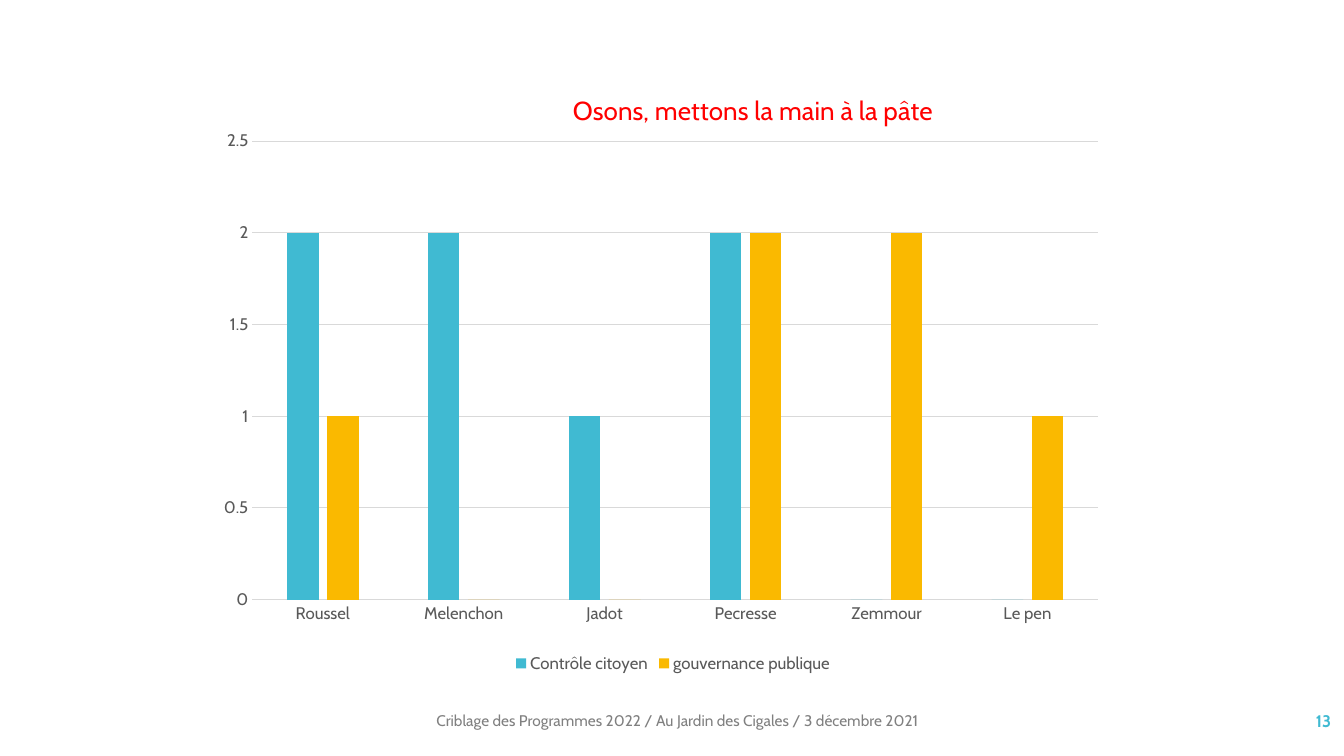
from lxml import etree
from pptx import Presentation
from pptx.chart.data import CategoryChartData
from pptx.dml.color import RGBColor
from pptx.enum import chart as ch, text
from pptx.oxml.ns import qn
from pptx.util import Inches, Pt

FONT = "Cabin"
COLORS = {"blue": "40BAD2", "yellow": "FAB900", "title": "FF0000",
          "label": "595959", "grid": "D9D9D9", "footer": "808080"}
TITLE = "Osons, mettons la main à la pâte"
CANDIDATES = ["Roussel", "Melenchon", "Jadot", "Pecresse", "Zemmour", "Le pen"]
SERIES = [("Contrôle citoyen", (2, 2, 1, 2, 0, 0), "blue"),
          ("gouvernance publique", (1, 0, 0, 2, 2, 1), "yellow")]
CHART_BOX = (2.22, 0.79, 8.89, 5.93)
PLOT_BOX = {"x": 0.26, "y": 0.61, "w": 8.41, "h": 4.55}
TITLE_SPOT = {"x": 3.4, "y": 0.08}
FOOTERS = [
    ("Criblage des Programmes 2022 / Au Jardin des Cigales / 3 décembre 2021",
     (4.23, 6.95, 6.46, 0.4), 11, "footer", False, text.PP_ALIGN.LEFT),
    ("13", (11.63, 6.95, 1.67, 0.4), 12, "blue", True, text.PP_ALIGN.RIGHT),
]


def rgb(name):
    return RGBColor.from_string(COLORS[name])


def style_font(font, size, color, bold=False):
    font.name, font.size, font.bold = FONT, Pt(size), bold
    font.color.rgb = rgb(color)


def style_line(line):
    line.color.rgb = rgb("grid")
    line.width = Pt(0.75)


def set_layout(parent, index, box, **modes):
    layout = parent.find(qn("c:layout"))
    if layout is None:
        layout = etree.Element(qn("c:layout"))
        parent.insert(index, layout)
    width, height = CHART_BOX[2:]
    shares = {tag: length / (width if tag in "xw" else height)
              for tag, length in box.items()}
    settings = {**modes, "xMode": "edge", "yMode": "edge", **shares}
    manual = etree.SubElement(layout, qn("c:manualLayout"))
    for tag, value in settings.items():
        etree.SubElement(manual, qn(f"c:{tag}")).set("val", str(value))


def add_footer(slide, words, box, size, color, bold, align):
    tf = slide.shapes.add_textbox(*map(Inches, box)).text_frame
    tf.word_wrap = True
    tf.vertical_anchor = text.MSO_ANCHOR.MIDDLE
    p = tf.paragraphs[0]
    p.text, p.alignment = words, align
    style_font(p.runs[0].font, size, color, bold)


def add_bar_chart(slide):
    data = CategoryChartData()
    data.categories = CANDIDATES
    for name, values, _ in SERIES:
        data.add_series(name, values)
    chart = slide.shapes.add_chart(ch.XL_CHART_TYPE.COLUMN_CLUSTERED,
                                   *map(Inches, CHART_BOX), data).chart
    style_font(chart.font, 12, "label")

    chart.has_title = True
    title = chart.chart_title
    p = title.text_frame.paragraphs[0]
    p.text = TITLE
    style_font(p.runs[0].font, 18.6, "title")
    title.include_in_layout = False
    set_layout(title._element, 1, TITLE_SPOT)

    plot = chart.plots[0]
    plot.gap_width, plot.overlap = 219, -27
    plot.vary_by_categories = False
    for series, (_, _, color) in zip(plot.series, SERIES):
        series.format.fill.solid()
        series.format.fill.fore_color.rgb = rgb(color)
        series.invert_if_negative = False
    set_layout(chart._chartSpace.chart.plotArea, 0, PLOT_BOX, layoutTarget="inner")

    for axis in (chart.category_axis, chart.value_axis):
        axis.major_tick_mark = axis.minor_tick_mark = ch.XL_TICK_MARK.NONE
        style_font(axis.tick_labels.font, 12, "label")
    style_line(chart.category_axis.format.line)
    values = chart.value_axis
    values.minimum_scale, values.maximum_scale, values.major_unit = 0, 2.5, 0.5
    values.format.line.fill.background()
    values.has_major_gridlines = True
    style_line(values.major_gridlines.format.line)

    chart.has_legend = True
    chart.legend.position = ch.XL_LEGEND_POSITION.BOTTOM
    chart.legend.include_in_layout = False
    style_font(chart.legend.font, 12, "label")


def main():
    prs = Presentation()
    prs.slide_width, prs.slide_height = Inches(13.33), Inches(7.5)
    slide = prs.slides.add_slide(prs.slide_layouts[6])
    for footer in FOOTERS:
        add_footer(slide, *footer)
    add_bar_chart(slide)
    prs.save("out.pptx")


if __name__ == "__main__":
    main()
